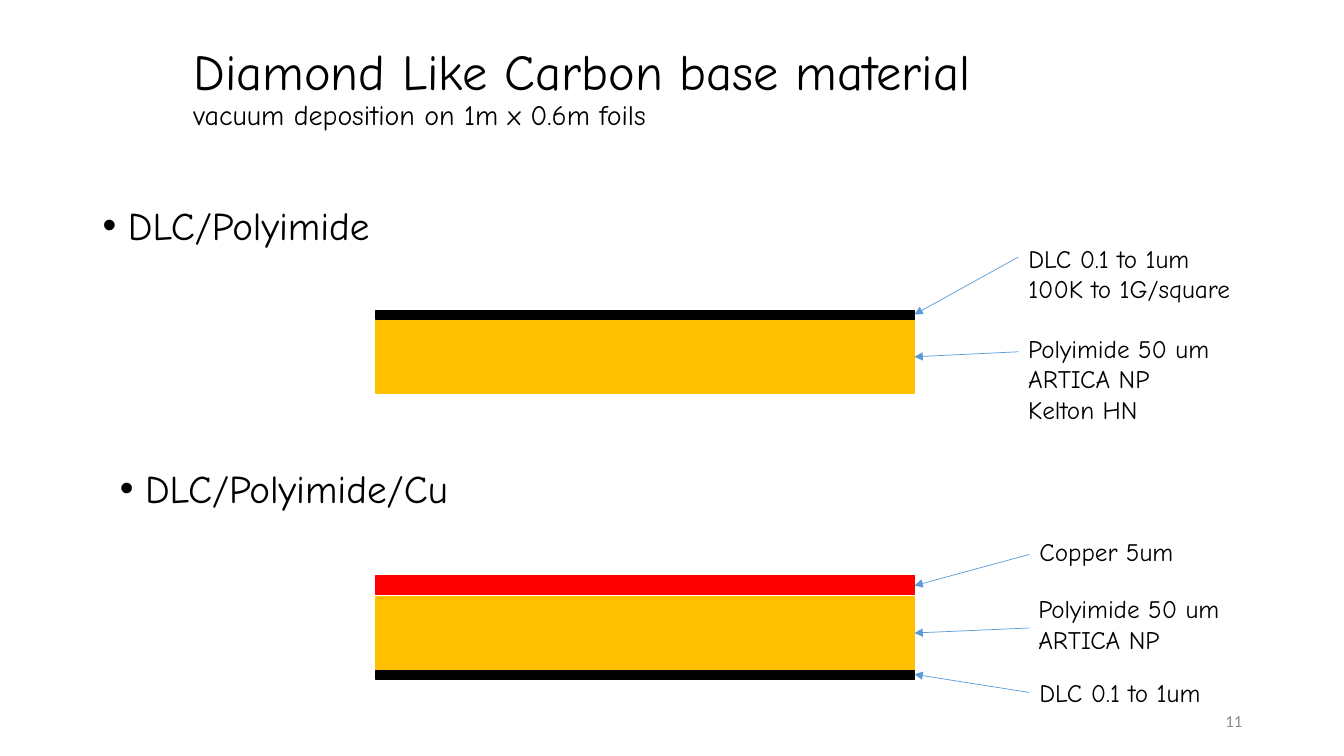
from pptx import Presentation
from pptx import util as u
from pptx.dml import color
from pptx.enum import shapes, text
from pptx.oxml import ns, xmlchemy

FONT = "Comic Neue"
BLACK, GOLD, RED, BLUE, GRAY = "000000", "FFC000", "FF0000", "5B9BD5", "8C8C8C"
STACK_LEFT, STACK_WIDTH = 3.73, 5.34
STACK_RIGHT = STACK_LEFT + STACK_WIDTH

LAYERS = [
    (3.18, 0.72, GOLD),
    (3.08, 0.09, BLACK),
    (5.92, 0.72, GOLD),
    (5.71, 0.19, RED),
    (6.65, 0.09, BLACK),
]
LABELS = [
    (10.1, 3.26, 2.23, 1.01, ["Polyimide 50 um", "ARTICA NP", "Kelton HN"]),
    (10.1, 2.36, 2.42, 0.71, ["DLC 0.1 to 1um", "100K to 1G/square"]),
    (10.2, 5.84, 2.23, 0.71, ["Polyimide 50 um", "ARTICA NP"]),
    (10.21, 6.67, 2.42, 0.4, ["DLC 0.1 to 1um"]),
    (10.21, 5.27, 2.42, 0.4, ["Copper 5um"]),
]
ARROWS = [
    (10.1, 3.49, 3.54),
    (10.1, 2.55, 3.12),
    (10.21, 6.23, 6.28),
    (10.21, 5.5, 5.81),
    (10.21, 6.87, 6.69),
]


def rgb(value):
    """Return the colour for a hex string."""
    return color.RGBColor.from_string(value)


def assign(target, values):
    """Set each named attribute of the target."""
    for name, value in values.items():
        setattr(target, name, value)


def add_box(page, left, top, width, height, anchor=text.MSO_ANCHOR.TOP):
    """Add a wrapping text box and return its text frame."""
    box = page.shapes.add_textbox(*map(u.Inches, (left, top, width, height)))
    assign(box.text_frame, {"word_wrap": True, "vertical_anchor": anchor})
    return box.text_frame


def add_span(para, words, size, font=FONT, ink=BLACK):
    """Add a formatted run to a paragraph."""
    span = para.add_run()
    span.text = words
    assign(span.font, {"size": u.Pt(size), "name": font})
    span.font.color.rgb = rgb(ink)


def add_title(page, heading, subheading):
    """Add the heading with a smaller line below it."""
    frame = add_box(page, 1.82, 0.16, 9.43, 1.45, text.MSO_ANCHOR.MIDDLE)
    para = frame.paragraphs[0]
    para.line_spacing = 0.9
    add_span(para, heading, 36)
    para.add_line_break()
    add_span(para, subheading, 20)


def add_bullet(page, left, top, words):
    """Add a single bulleted line."""
    para = add_box(page, left, top, 11.88, 0.72).paragraphs[0]
    para.line_spacing = 0.9
    properties = para._p.get_or_add_pPr()
    properties.set("marL", str(u.Inches(0.25)))
    properties.set("indent", str(-u.Inches(0.25)))
    for tag, key, value in (("buFont", "typeface", "Arial"), ("buChar", "char", "•")):
        element = xmlchemy.OxmlElement(f"a:{tag}")
        element.set(key, value)
        properties.append(element)
    add_span(para, words, 28)


def add_layer(page, top, height, ink):
    """Add one layer of a foil stack."""
    layer = page.shapes.add_shape(
        shapes.MSO_SHAPE.RECTANGLE,
        *map(u.Inches, (STACK_LEFT, top, STACK_WIDTH, height)),
    )
    layer.shadow.inherit = False
    layer.fill.solid()
    layer.fill.fore_color.rgb = rgb(ink)
    layer.line.color.rgb = rgb(ink)
    layer.line.width = u.Pt(1)


def add_label(page, left, top, width, height, lines):
    """Add a label with one paragraph for each line."""
    frame = add_box(page, left, top, width, height)
    for index, words in enumerate(lines):
        para = frame.add_paragraph() if index else frame.paragraphs[0]
        add_span(para, words, 18)


def add_arrow(page, left, start, end):
    """Add an arrow from a label to the right edge of a stack."""
    arrow = page.shapes.add_connector(
        shapes.MSO_CONNECTOR.STRAIGHT,
        *map(u.Inches, (left, start, STACK_RIGHT, end)),
    )
    arrow.line.color.rgb = rgb(BLUE)
    arrow.line.width = u.Pt(0.5)
    head = xmlchemy.OxmlElement("a:tailEnd")
    head.set("type", "triangle")
    properties = arrow._element.spPr
    properties.find(ns.qn("a:ln")).append(head)
    properties.append(xmlchemy.OxmlElement("a:effectLst"))


def add_number(page, number):
    """Add the page number at the bottom right."""
    para = add_box(page, 9.42, 6.95, 3, 0.4, text.MSO_ANCHOR.MIDDLE).paragraphs[0]
    para.alignment = text.PP_ALIGN.RIGHT
    add_span(para, number, 12, "Calibri", GRAY)


def main():
    """Build the slide and save it."""
    deck = Presentation()
    assign(deck, {"slide_width": u.Inches(13.33), "slide_height": u.Inches(7.5)})
    page = deck.slides.add_slide(deck.slide_layouts[6])
    add_title(page, "Diamond Like Carbon base material", "vacuum deposition on 1m x 0.6m foils")
    add_bullet(page, 0.92, 2, "DLC/Polyimide")
    add_bullet(page, 1.09, 4.61, "DLC/Polyimide/Cu")
    for layer in LAYERS:
        add_layer(page, *layer)
    for label in LABELS:
        add_label(page, *label)
    for arrow in ARROWS:
        add_arrow(page, *arrow)
    add_number(page, "11")
    deck.save("out.pptx")


if __name__ == "__main__":
    main()
